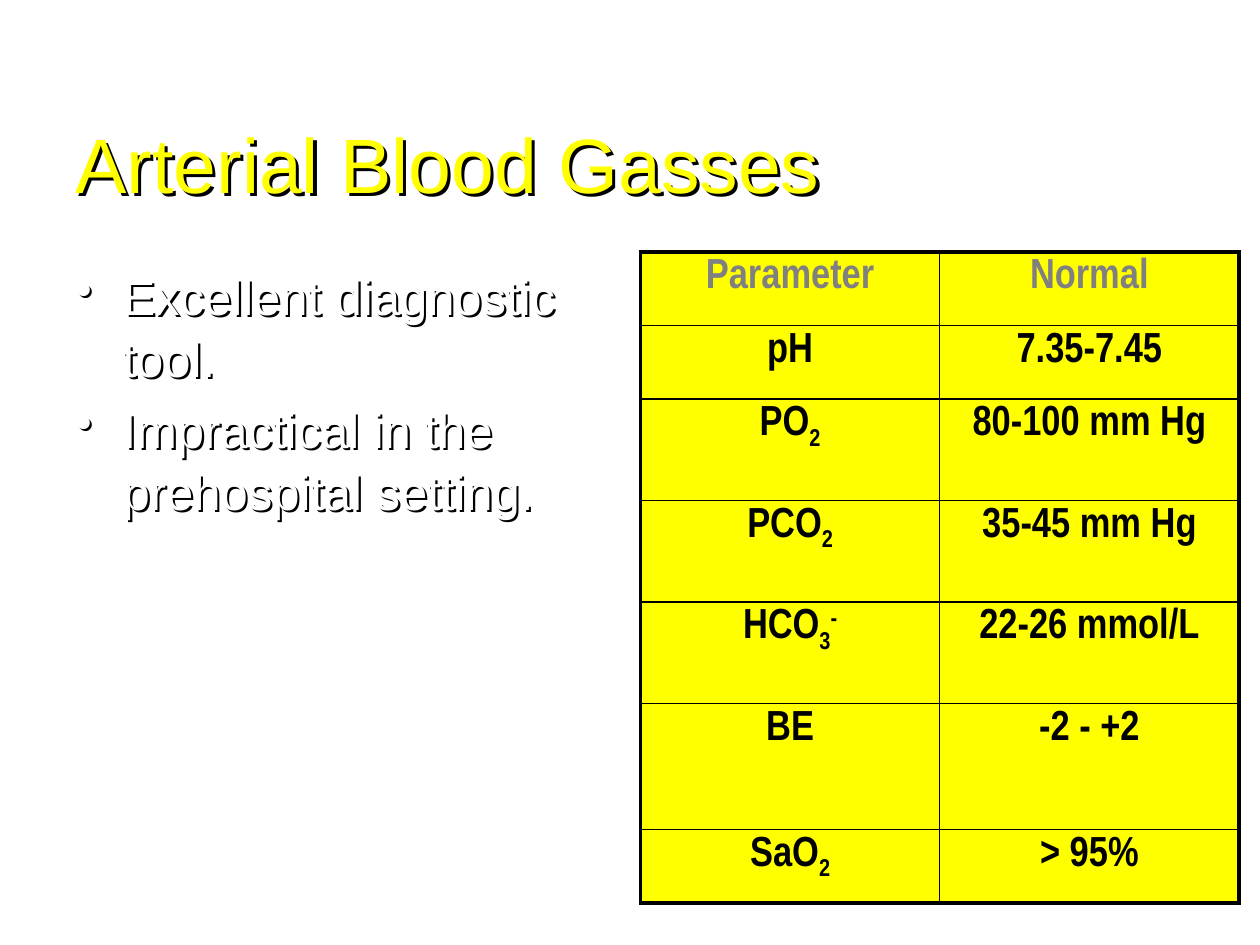
from dataclasses import dataclass

from lxml.etree import SubElement
from pptx import Presentation
from pptx.dml.color import RGBColor
from pptx.enum.text import MSO_ANCHOR, PP_ALIGN
from pptx.oxml.ns import qn
from pptx.util import Pt


@dataclass(frozen=True)
class Theme:
    yellow: str = "FFFF00"
    white: str = "FFFFFF"
    black: str = "000000"
    gray: str = "808080"
    font: str = "Arial"
    table_font: str = "Arial Narrow"
    title_size: float = 44
    body_size: float = 28
    table_size: float = 24
    outer_line: float = 2.25
    inner_line: float = 1


THEME = Theme()
SUB, SUP = -25000, 30000

BULLETS = ["Excellent diagnostic tool.", "Impractical in the prehospital setting."]
GASES = [
    (["Parameter"], "Normal", 42),
    (["pH"], "7.35-7.45", 42),
    (["PO", ("2", SUB)], "80-100 mm Hg", 58),
    (["PCO", ("2", SUB)], "35-45 mm Hg", 58),
    (["HCO", ("3", SUB), ("-", SUP)], "22-26 mmol/L", 58),
    (["BE"], "-2 - +2", 72),
    (["SaO", ("2", SUB)], "> 95%", 42),
]


def add_text(p, text, *, size, color, font=THEME.font, bold=False,
             align=PP_ALIGN.LEFT, baseline=0):
    p.alignment = align
    r = p.add_run()
    r.text = text
    r.font.size = Pt(size)
    r.font.bold = bold
    r.font.color.rgb = RGBColor.from_string(color)
    r.font.name = font
    if baseline:
        r._r.get_or_add_rPr().set("baseline", str(baseline))


def add_shadow(sp, distance):
    effects = SubElement(sp._element.spPr, qn("a:effectLst"))
    outer = SubElement(effects, qn("a:outerShdw"), blurRad="0",
                       dist=str(Pt(distance)), dir="2700000",
                       algn="tl", rotWithShape="0")
    SubElement(outer, qn("a:srgbClr"), val=THEME.black)


def add_box(s, left, top, width, height, anchor, shadow):
    sp = s.shapes.add_textbox(Pt(left), Pt(top), Pt(width), Pt(height))
    add_shadow(sp, shadow)
    tf = sp.text_frame
    tf.word_wrap = True
    tf.vertical_anchor = anchor
    return tf


def add_title(s, text):
    tf = add_box(s, 36, 48, 648, 90, MSO_ANCHOR.MIDDLE, shadow=2.5)
    add_text(tf.paragraphs[0], text, size=THEME.title_size, color=THEME.yellow)


def add_bullets(s, items):
    tf = add_box(s, 36, 144, 318, 338, MSO_ANCHOR.TOP, shadow=1.75)
    tf.margin_top = Pt(6.5)
    for i, item in enumerate(items):
        p = tf.add_paragraph() if i else tf.paragraphs[0]
        pPr = p._p.get_or_add_pPr()
        pPr.set("marL", str(Pt(27)))
        pPr.set("indent", str(-Pt(27)))
        SubElement(pPr, qn("a:buChar"), char="•")
        p.line_spacing = 1.05
        if i:
            p.space_before = Pt(THEME.body_size * 0.2)
        add_text(p, item, size=THEME.body_size, color=THEME.white)


def set_borders(cell, outer_sides):
    tcPr = cell._tc.get_or_add_tcPr()
    for side in "LRTB":
        width = THEME.outer_line if side in outer_sides else THEME.inner_line
        ln = SubElement(tcPr, qn(f"a:ln{side}"), w=str(Pt(width)))
        fill = SubElement(ln, qn("a:solidFill"))
        SubElement(fill, qn("a:srgbClr"), val=THEME.black)


def fill_cell(cell, runs, color, outer_sides):
    set_borders(cell, outer_sides)
    cell.fill.solid()
    cell.fill.fore_color.rgb = RGBColor.from_string(THEME.yellow)
    p = cell.text_frame.paragraphs[0]
    for run in runs:
        text, baseline = (run, 0) if isinstance(run, str) else run
        add_text(p, text, size=THEME.table_size, color=color, font=THEME.table_font,
                 bold=True, align=PP_ALIGN.CENTER, baseline=baseline)


def add_gas_table(s, rows):
    height = sum(row[-1] for row in rows)
    table = s.shapes.add_table(len(rows), 2, Pt(366), Pt(144),
                               Pt(342), Pt(height)).table
    table.first_row = table.horz_banding = False
    for i, (parameter, normal, row_height) in enumerate(rows):
        table.rows[i].height = Pt(row_height)
        color = THEME.black if i else THEME.gray
        edge = "T" if i == 0 else "B" if i == len(rows) - 1 else ""
        fill_cell(table.cell(i, 0), parameter, color, "L" + edge)
        fill_cell(table.cell(i, 1), [normal], color, "R" + edge)


def main():
    prs = Presentation()
    prs.slide_width, prs.slide_height = Pt(720), Pt(540)
    s = prs.slides.add_slide(prs.slide_layouts[6])
    add_title(s, "Arterial Blood Gasses")
    add_bullets(s, BULLETS)
    add_gas_table(s, GASES)
    prs.save("out.pptx")


if __name__ == "__main__":
    main()
